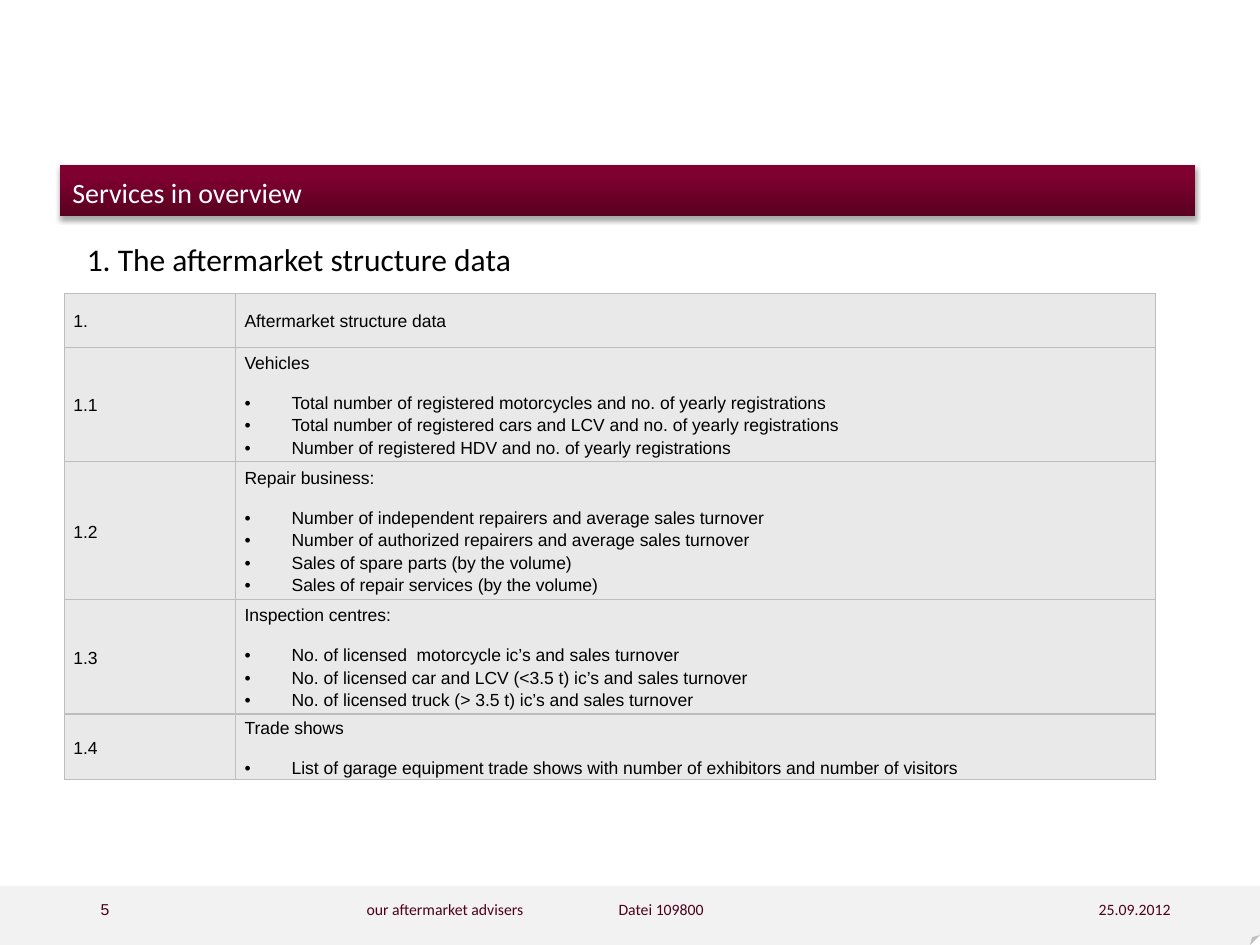
from dataclasses import dataclass

from lxml import etree
from pptx import Presentation
from pptx import util as u
from pptx.dml.color import RGBColor
from pptx.enum import shapes, text
from pptx.oxml import parse_xml
from pptx.oxml.ns import nsdecls, qn


@dataclass(frozen=True)
class Theme:
    heading: str = "Calibri"
    body: str = "Arial"
    white: str = "FFFFFF"
    black: str = "000000"
    wine: str = "4E001E"
    banner_top: str = "80002F"
    banner_bottom: str = "5A0021"
    footer: str = "F2F2F2"
    cell: str = "E9E9E9"
    border: str = "BDBDBD"
    title_size: float = 16
    subtitle_size: float = 18
    table_size: float = 10
    footer_size: float = 9


T = Theme()

SERVICES = [
    ("1.", "Aftermarket structure data", []),
    ("1.1", "Vehicles", [
        "Total number of registered motorcycles and no. of yearly registrations",
        "Total number of registered cars and LCV and no. of yearly registrations",
        "Number of registered HDV and no. of yearly registrations",
    ]),
    ("1.2", "Repair business:", [
        "Number of independent repairers and average sales turnover",
        "Number of authorized repairers and average sales turnover",
        "Sales of spare parts (by the volume)",
        "Sales of repair services (by the volume)",
    ]),
    ("1.3", "Inspection centres:", [
        "No. of licensed  motorcycle ic’s and sales turnover",
        "No. of licensed car and LCV (<3.5 t) ic’s and sales turnover",
        "No. of licensed truck (> 3.5 t) ic’s and sales turnover",
    ]),
    ("1.4", "Trade shows", [
        "List of garage equipment trade shows with number of exhibitors and number of visitors",
    ]),
]


def add_run(p, words, size, font, color):
    r = p.add_run()
    r.text = words
    r.font.size = u.Pt(size)
    r.font.name = font
    r.font.color.rgb = RGBColor.from_string(color)


def add_label(slide, box, words, size, font, color):
    s = slide.shapes.add_textbox(*map(u.Cm, box))
    tf = s.text_frame
    tf.word_wrap = True
    add_run(tf.paragraphs[0], words, size, font, color)


def add_footer(slide, box):
    left, top, width, height = box
    s = slide.shapes.add_shape(shapes.MSO_SHAPE.FOLDED_CORNER, *map(u.Cm, box))
    s.shadow.inherit = False
    s.fill.solid()
    s.fill.fore_color.rgb = RGBColor.from_string(T.footer)
    s.line.fill.background()
    for offset, label_width, words, font in [
        (1.78, 1.14, "5", T.body),
        (7.14, 13.77, "our aftermarket advisers\t\tDatei 109800", T.heading),
        (21.9, 2.11, "25.09.2012", T.heading),
    ]:
        add_label(slide, (left + offset, top + 0.15, label_width, 0.64),
                  words, T.footer_size, font, T.wine)


def add_banner(slide, box, title):
    s = slide.shapes.add_shape(shapes.MSO_SHAPE.RECTANGLE, *map(u.Cm, box))
    s.fill.gradient()
    s.fill.gradient_angle = 270
    for stop, color, position in zip(s.fill.gradient_stops,
                                     (T.banner_top, T.banner_bottom), (0.2, 1)):
        stop.color.rgb = RGBColor.from_string(color)
        stop.position = position
    s.line.fill.background()
    s._element.spPr.append(parse_xml(
        f'<a:effectLst {nsdecls("a")}><a:outerShdw blurRad="40000" dist="23000" '
        'dir="5400000" rotWithShape="0"><a:srgbClr val="000000">'
        '<a:alpha val="35000"/></a:srgbClr></a:outerShdw></a:effectLst>'))
    tf = s.text_frame
    tf.word_wrap = True
    tf.vertical_anchor = text.MSO_ANCHOR.BOTTOM
    p = tf.paragraphs[0]
    p.alignment = text.PP_ALIGN.LEFT
    add_run(p, title, T.title_size, T.heading, T.white)


def set_borders(cell):
    tc_pr = cell._tc.get_or_add_tcPr()
    for i, side in enumerate(("lnL", "lnR", "lnT", "lnB")):
        tc_pr.insert(i, parse_xml(
            f'<a:{side} {nsdecls("a")} w="9525"><a:solidFill>'
            f'<a:srgbClr val="{T.border}"/></a:solidFill></a:{side}>'))


def set_bullet(p):
    p_pr = p._p.get_or_add_pPr()
    p_pr.set("marL", str(u.Cm(0.95)))
    p_pr.set("indent", str(u.Cm(-0.95)))
    etree.SubElement(p_pr, qn("a:buFont")).set("typeface", T.body)
    etree.SubElement(p_pr, qn("a:buChar")).set("char", "•")


def fill_cell(cell, heading, bullets=()):
    cell.fill.solid()
    cell.fill.fore_color.rgb = RGBColor.from_string(T.cell)
    set_borders(cell)
    cell.vertical_anchor = text.MSO_ANCHOR.MIDDLE
    cell.margin_left = cell.margin_right = u.Cm(0.18)
    cell.margin_top = cell.margin_bottom = 0
    tf = cell.text_frame
    for i, words in enumerate([heading, *bullets]):
        p = tf.add_paragraph() if i else tf.paragraphs[0]
        if i:
            set_bullet(p)
        p.line_spacing = 1.15
        p.space_before = u.Pt(10 if i == 1 else 0)
        add_run(p, words, T.table_size, T.body, T.black)


def add_services(slide, box, services):
    number_width = 3.45
    row_heights = (1.09, 2.21, 2.69, 2.21, 1.27)
    table = slide.shapes.add_table(len(services), 2, *map(u.Cm, box)).table
    table.first_row = table.horz_banding = False
    for column, width in zip(table.columns, (number_width, box[2] - number_width)):
        column.width = u.Cm(width)
    for row, height, (number, heading, bullets) in zip(table.rows, row_heights, services):
        row.height = u.Cm(height)
        fill_cell(row.cells[0], number)
        fill_cell(row.cells[1], heading, bullets)


def main():
    prs = Presentation()
    prs.slide_width, prs.slide_height = u.Cm(25.4), u.Cm(19.05)
    slide = prs.slides.add_slide(prs.slide_layouts[6])
    add_footer(slide, (0, 17.86, 25.4, 1.19))
    add_banner(slide, (1.21, 3.32, 22.89, 1.03), "Services in overview")
    add_services(slide, (1.3, 5.91, 22, 9.47), SERVICES)
    add_label(slide, (1.5, 4.72, 22.6, 1.02), "1. The aftermarket structure data",
              T.subtitle_size, T.heading, T.black)
    prs.save("out.pptx")


if __name__ == "__main__":
    main()
